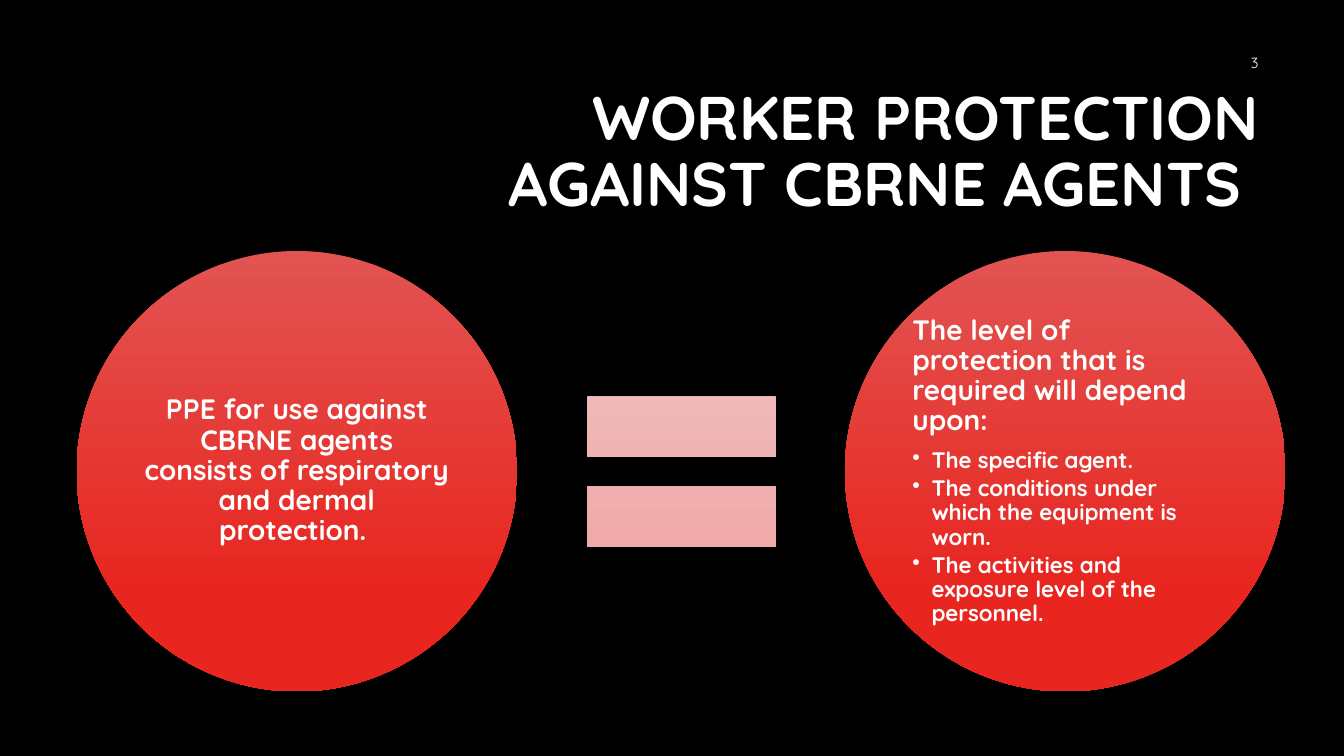
"""Build the slide on worker protection against CBRNE agents."""
from dataclasses import dataclass
from lxml.etree import SubElement
from pptx import Presentation
from pptx.dml.color import RGBColor
from pptx.enum.shapes import MSO_SHAPE
from pptx.enum.text import MSO_ANCHOR, MSO_AUTO_SIZE, PP_ALIGN
from pptx.oxml.ns import qn
from pptx.util import Inches, Pt


@dataclass(frozen=True)
class Theme:
    face: str = "Quicksand"
    back: str = "000000"
    text: str = "FFFFFF"
    disc: tuple = ("E25452", "E8251F")
    sign: tuple = ("F0BFBF", "F0AAAA")
    head: float = 44
    lead: float = 20
    item: float = 16
    page: float = 10.5


theme = Theme()


def write(par, text, size, bold=True, **form):
    """Fill a paragraph and set its format."""
    par.text = text
    for key, value in form.items():
        setattr(par, key, value)
    face = {"name": theme.face, "size": Pt(size), "bold": bold}
    for run in par.runs:
        for key, value in face.items():
            setattr(run.font, key, value)
        run.font.color.rgb = RGBColor.from_string(theme.text)


def draw(kind, left, top, size, tones):
    """Add a square shape with a downward gradient."""
    shape = slide.shapes.add_shape(
        kind, Inches(left), Inches(top), Inches(size), Inches(size))
    shape.shadow.inherit = False
    shape.line.fill.background()
    shape.fill.gradient()
    shape.fill.gradient_angle = 270
    for stop, tone, place in zip(shape.fill.gradient_stops, tones, (0, 0.78)):
        stop.color.rgb = RGBColor.from_string(tone)
        stop.position = place
    frame = shape.text_frame
    frame.word_wrap = True
    frame.vertical_anchor = MSO_ANCHOR.MIDDLE
    for side in ("left", "top", "right", "bottom"):
        setattr(frame, f"margin_{side}", Inches(0.03))
    return frame


deck = Presentation()
deck.slide_width, deck.slide_height = Inches(13.33), Inches(7.5)
slide = deck.slides.add_slide(deck.slide_layouts[5])
slide.background.fill.solid()
slide.background.fill.fore_color.rgb = RGBColor.from_string(theme.back)

title = slide.shapes.title
place = {"left": 3.17, "top": 0.82, "width": 9.42, "height": 1.41}
for key, value in place.items():
    setattr(title, key, Inches(value))
page = slide.shapes.add_textbox(
    Inches(9.58), Inches(0.42), Inches(3), Inches(0.4))
for box in (title, page):
    frame = box.text_frame
    frame.word_wrap = True
    frame.auto_size = MSO_AUTO_SIZE.NONE
    frame.vertical_anchor = MSO_ANCHOR.MIDDLE
write(title.text_frame.paragraphs[0],
      "WORKER PROTECTION AGAINST CBRNE AGENTS ", theme.head,
      alignment=PP_ALIGN.RIGHT, line_spacing=0.9)
write(page.text_frame.paragraphs[0], "3", theme.page, bold=False,
      alignment=PP_ALIGN.RIGHT, space_after=Pt(6))

lead = {"line_spacing": 0.9, "space_after": Pt(8.75)}
gear = draw(MSO_SHAPE.OVAL, 0.76, 2.49, 4.37, theme.disc)
write(gear.paragraphs[0],
      "PPE for use against CBRNE agents consists of respiratory "
      "and dermal protection. ",
      theme.lead, alignment=PP_ALIGN.CENTER, **lead)

draw(MSO_SHAPE.MATH_EQUAL, 5.49, 3.41, 2.54, theme.sign)

level = draw(MSO_SHAPE.OVAL, 8.38, 2.49, 4.37, theme.disc)
write(level.paragraphs[0],
      "The level of protection that is required will depend upon:",
      theme.lead, alignment=PP_ALIGN.LEFT, **lead)
items = (
    "The specific agent.",
    "The conditions under which the equipment is worn.",
    "The activities and exposure level of the personnel.",
)
for text in items:
    par = level.add_paragraph()
    props = par._p.get_or_add_pPr()
    props.set("marL", str(Inches(0.19)))
    props.set("indent", str(-Inches(0.19)))
    SubElement(props, qn("a:buChar")).set("char", "•")
    write(par, text, theme.item, level=1, alignment=PP_ALIGN.LEFT,
          line_spacing=0.9, space_after=Pt(3))

deck.save("out.pptx")
